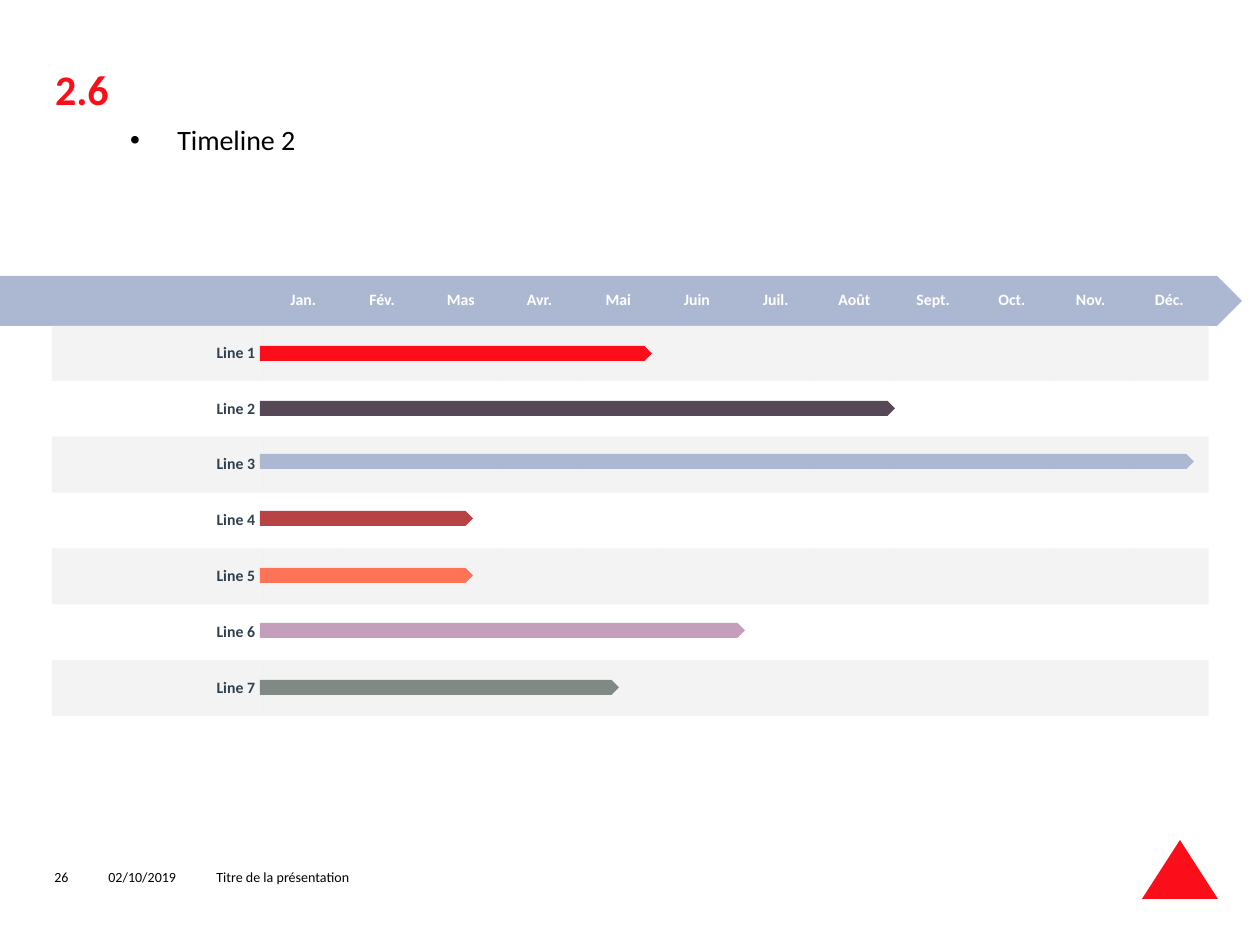
"""Build a yearly timeline slide with a month table and one bar per line."""
from lxml import etree
from pptx import Presentation
from pptx.dml.color import RGBColor
from pptx.enum.shapes import MSO_SHAPE
from pptx.enum.text import MSO_ANCHOR, MSO_AUTO_SIZE, PP_ALIGN
from pptx.oxml.ns import qn
from pptx.util import Pt

PENTAGON, TRIANGLE = MSO_SHAPE.PENTAGON, MSO_SHAPE.ISOSCELES_TRIANGLE
TOP, MIDDLE = MSO_ANCHOR.TOP, MSO_ANCHOR.MIDDLE
LEFT, CENTER, RIGHT = PP_ALIGN.LEFT, PP_ALIGN.CENTER, PP_ALIGN.RIGHT
PX = 914400 / 126
NO_GRID = "{2D5ABB26-0587-4C30-8999-92F81FD0307C}"
COLORS = {
    "red": "FC0D1A", "plum": "574855", "blue": "ACB8D2", "brick": "B84344",
    "coral": "FF7458", "mauve": "C49FBB", "gray": "818985",
    "band": "D9D9D9", "label": "314051", "black": "000000", "white": "FFFFFF",
}
MONTHS = ["Jan.", "Fév.", "Mas", "Avr.", "Mai", "Juin",
          "Juil.", "Août", "Sept.", "Oct.", "Nov.", "Déc."]
BARS = [(346, 392, "red"), (401, 635, "plum"), (454, 934, "blue"),
        (511, 213, "brick"), (568, 213, "coral"), (623, 485, "mauve"),
        (680, 359, "gray")]
FOOTER = [(96, 110, "02/10/2019"), (204, 1013, "Titre de la présentation"),
          (42, 54, "26")]


def add_solid(kind, color, *box):
    s = slide.shapes.add_shape(kind, *[round(v * PX) for v in box])
    s.shadow.inherit = False
    s.fill.solid()
    s.fill.fore_color.rgb = RGBColor.from_string(COLORS[color])
    s.line.fill.background()


def write(tf, text, size, color, bold=False, align=LEFT):
    tf.text = text
    p = tf.paragraphs[0]
    p.alignment = align
    p.space_before = Pt(0)
    font = p.runs[0].font
    font.name, font.size, font.bold = "Calibri", Pt(size), bold
    font.color.rgb = RGBColor.from_string(COLORS[color])


prs = Presentation()
prs.slide_width, prs.slide_height = round(1260 * PX), round(945 * PX)
slide = prs.slides.add_slide(prs.slide_layouts[1])

title, body = slide.shapes.title, slide.placeholders[1]
for s, box, anchor, left, right in [
    (title, (42, 63, 82, 52), TOP, 13, 0),
    (body, (125, 116, 1018, 47), MIDDLE, 5, 13),
]:
    s.left, s.top, s.width, s.height = [round(v * PX) for v in box]
    tf = s.text_frame
    tf.auto_size = MSO_AUTO_SIZE.NONE
    tf.vertical_anchor = anchor
    tf.margin_left, tf.margin_right = round(left * PX), round(right * PX)
write(title.text_frame, "2.6", 24, "red", bold=True)
title.text_frame.paragraphs[0].line_spacing = 0.9
pPr = body.text_frame.paragraphs[0]._p.get_or_add_pPr()
pPr.set("marL", str(round(10 * PX)))
pPr.set("indent", "0")
etree.SubElement(pPr, qn("a:buNone"))
write(body.text_frame, "Timeline 2", 16, "black")

add_solid(TRIANGLE, "red", 1142, 840, 76, 59)
add_solid(PENTAGON, "blue", 0, 276, 1242, 50)

for left, width, text in FOOTER:
    s = slide.shapes.add_textbox(*[round(v * PX) for v in (left, 852, width, 50)])
    s.text_frame.word_wrap = True
    s.text_frame.vertical_anchor = MIDDLE
    write(s.text_frame, text, 8, "black")

table = slide.shapes.add_table(
    len(BARS) + 1, len(MONTHS) + 1,
    *[round(v * PX) for v in (52, 276, 1157, 440)]).table
table.first_row = table.horz_banding = False
table._tbl.tblPr.find(qn("a:tableStyleId")).text = NO_GRID
for c, column in enumerate(table.columns):
    column.width = round((945 / len(MONTHS) if c else 212) * PX)
for r, row in enumerate(table.rows):
    row.height = round((391 / len(BARS) if r else 49) * PX)
    for c, cell in enumerate(row.cells):
        cell.vertical_anchor = MIDDLE
        cell.margin_top = cell.margin_bottom = round(5 * PX)
        cell.margin_left = cell.margin_right = round((4 if c else 9) * PX)
        if r % 2 or r == 0:
            cell.fill.solid()
            cell.fill.fore_color.rgb = RGBColor.from_string(COLORS["band" if r else "blue"])
        else:
            cell.fill.background()
        if r % 2:
            rgb = cell._tc.tcPr.find(".//" + qn("a:srgbClr"))
            etree.SubElement(rgb, qn("a:alpha"), val="30000")
        if r == 0 and c:
            write(cell.text_frame, MONTHS[c - 1], 9, "white", True, CENTER)
        elif r and c == 0:
            write(cell.text_frame, f"Line {r}", 9, "label", True, RIGHT)

for top, width, color in BARS:
    add_solid(PENTAGON, color, 260, top, width, 15)

prs.save("out.pptx")
